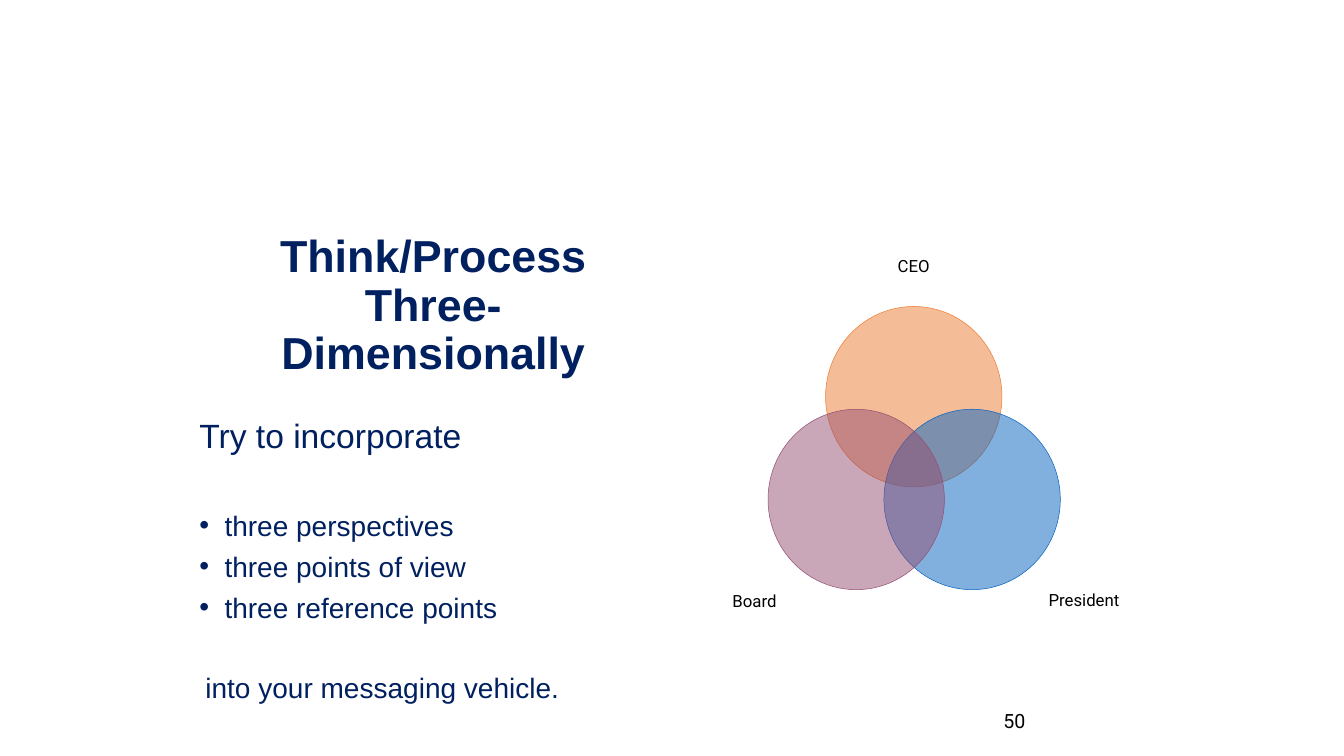
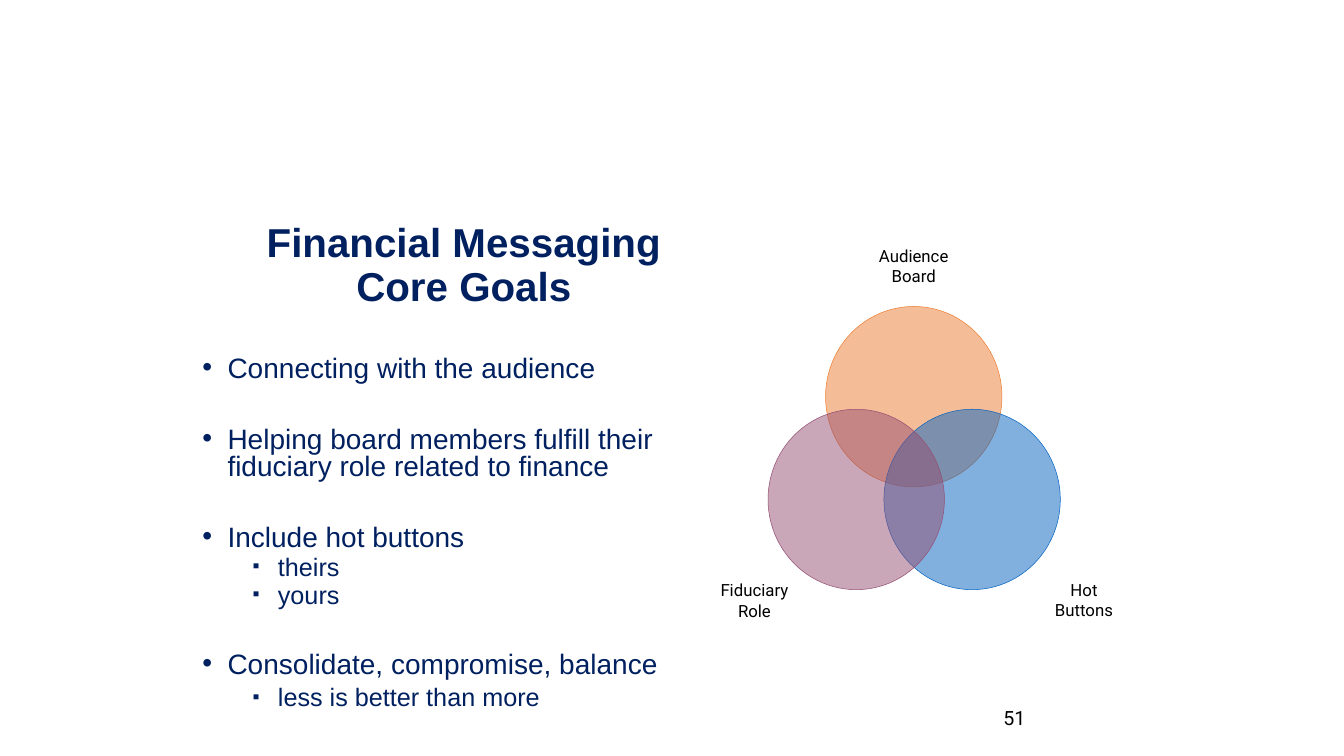
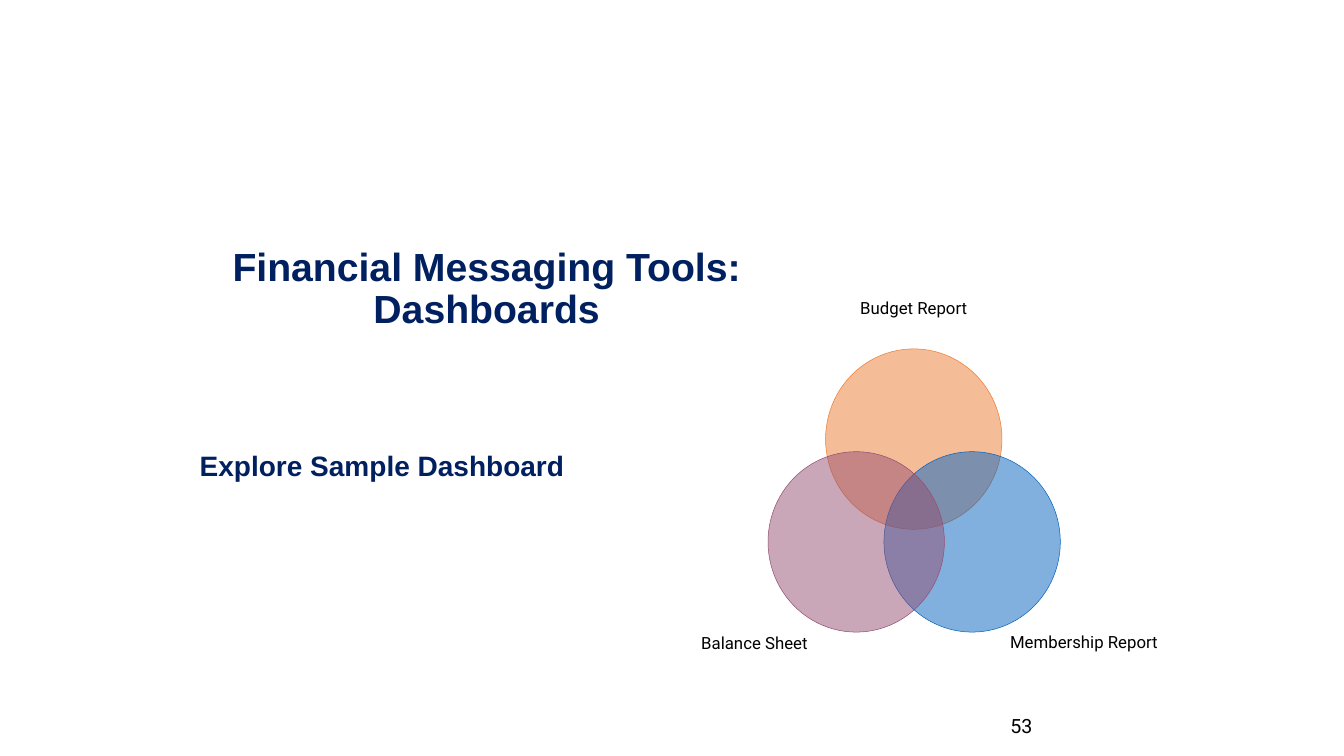
from copy import deepcopy

from lxml import etree
from pptx import Presentation
from pptx.dml.color import RGBColor
from pptx.enum.shapes import MSO_SHAPE
from pptx.enum.text import MSO_ANCHOR, MSO_AUTO_SIZE, PP_ALIGN
from pptx.oxml.ns import qn
from pptx.util import Pt

OVAL = MSO_SHAPE.OVAL
MID, TOP = MSO_ANCHOR.MIDDLE, MSO_ANCHOR.TOP
FIXED = MSO_AUTO_SIZE.NONE
MIDDLE, LEFT, RIGHT = PP_ALIGN.CENTER, PP_ALIGN.LEFT, PP_ALIGN.RIGHT

COLORS = {"navy": "002060", "black": "000000", "orange": "ED7D31",
          "blue": "0563C1", "plum": "954F72"}

HEAD = {"name": "Arial", "bold": True}
TEXT = {"name": "Arial", "bold": False}
LABEL = {"name": "Roboto", "size": Pt(12)}
NUMBER = {"name": "Roboto", "size": Pt(14)}
BARE = {"margin_left": 0, "margin_top": 0, "margin_right": 0,
        "margin_bottom": 0, "vertical_anchor": MID, "word_wrap": True}

KINDS = {
    "plain": {"mark": None, "level": 0, "left": 0, "hang": 0},
    "inset": {"mark": None, "level": 0, "left": 4.3, "hang": 0},
    "dot": {"mark": "•", "level": 0, "left": 18, "hang": -18},
    "square": {"mark": "▪", "level": 1, "left": 54, "hang": -18},
}

CIRCLES = [("orange", 67.7, 44.7), ("blue", 109.4, 118.1), ("plum", 26.6, 118.1)]
CENTERS = [(130.7, 15.6), (252.3, 254), (16.9, 254.6)]
WIDE, HIGH = 120, 32.4

SLIDES = [
    {
        "title": "Think/Process\vThree-Dimensionally", "size": 32,
        "head": (151.5, 168.7, 316.1, 100.8),
        "body": (135.2, 292.6, 349.2, 221),
        "items": [
            ("plain", "Try to incorporate", 24, 0, 1),
            ("dot", "three perspectives", 20, 43, 0.8),
            ("dot", "three points of view", 20, 10, 0.8),
            ("dot", "three reference points", 20, 10, 0.8),
            ("inset", "into your messaging vehicle.", 20, 38, 0.8),
        ],
        "venn": (522, 174.2), "labels": ["CEO", "President", "Board"],
        "number": "50", "corner": (589.7, 496.8),
    },
    {
        "title": "Financial Messaging\vCore Goals", "size": 28.8,
        "head": (167.2, 161, 328.3, 58.3),
        "body": (137.3, 246.6, 357.8, 275),
        "items": [
            ("dot", "Connecting with the audience", 20, 0, 1),
            ("dot", "Helping board members fulfill their fiduciary role "
                    "related to finance", 20, 31.5, 0.8),
            ("dot", "Include hot buttons", 20, 31.5, 0.8),
            ("square", "theirs", 18, 5, 0.7),
            ("square", "yours", 18, 5, 0.7),
            ("dot", "Consolidate, compromise, balance", 20, 31.5, 0.8),
            ("square", "less is better than more", 18, 5, 0.8),
        ],
        "venn": (522, 174.2),
        "labels": ["Audience\nBoard", "Hot\nButtons", "Fiduciary\nRole"],
        "number": "51", "corner": (589.7, 494.6),
    },
    {
        "title": "Financial Messaging Tools:\vDashboards", "size": 28,
        "head": (139.9, 151.5, 415.4, 110.9),
        "body": (135.4, 316.6, 370.8, 96),
        "items": [("plain", "Explore Sample Dashboard", 20, 0, 1)],
        "bold": True,
        "venn": (522, 204.5),
        "labels": ["Budget Report", "Membership Report", "Balance Sheet"],
        "number": "53", "corner": (594.7, 500.4),
    },
]


def apply(thing, values):
    for key, value in values.items():
        setattr(thing, key, value)


def paint(frame, style, color, align):
    for para in frame.paragraphs:
        para.alignment = align
        for run in para.runs:
            apply(run.font, style)
            run.font.color.rgb = RGBColor.from_string(COLORS[color])


def place(shape, box):
    keys = ("left", "top", "width", "height")
    apply(shape, {key: Pt(val) for key, val in zip(keys, box)})


def add_title(slide, box, text, size):
    title = slide.shapes.title
    place(title, box)
    frame = title.text_frame
    apply(frame, {"text": text, "vertical_anchor": MID, "auto_size": FIXED,
                  "word_wrap": True})
    paint(frame, {**HEAD, "size": Pt(size)}, "navy", MIDDLE)
    para = frame.paragraphs[0]
    para.line_spacing = 0.9
    for gap in para._p.findall(qn("a:br")):
        gap.append(deepcopy(para.runs[0]._r.rPr))


def set_mark(para, kind):
    props = para._p.get_or_add_pPr()
    props.set("marL", str(Pt(kind["left"])))
    props.set("indent", str(Pt(kind["hang"])))
    if not kind["mark"]:
        etree.SubElement(props, qn("a:buNone"))
        return
    if kind["level"]:
        etree.SubElement(props, qn("a:buSzPct"), val="79000")
    etree.SubElement(props, qn("a:buFont"), typeface="Arial")
    etree.SubElement(props, qn("a:buChar"), char=kind["mark"])


def add_body(slide, box, items, bold):
    body = slide.placeholders[1]
    place(body, box)
    frame = body.text_frame
    apply(frame, {"text": "\n".join(item[1] for item in items),
                  "vertical_anchor": TOP, "auto_size": FIXED, "word_wrap": True})
    paint(frame, {**TEXT, "bold": bold}, "navy", LEFT)
    for para, (name, _, size, before, line) in zip(frame.paragraphs, items):
        kind = KINDS[name]
        set_mark(para, kind)
        apply(para, {"level": kind["level"], "space_before": Pt(before),
                     "line_spacing": line})
        para.runs[0].font.size = Pt(size)


def add_disc(group, box, color):
    disc = group.shapes.add_shape(OVAL, *map(Pt, box))
    disc.shadow.inherit = False
    shade = RGBColor.from_string(COLORS[color])
    disc.fill.solid()
    disc.fill.fore_color.rgb = shade
    tint = disc._element.spPr.find(qn("a:solidFill")).find(qn("a:srgbClr"))
    etree.SubElement(tint, qn("a:alpha"), val="50000")
    disc.line.color.rgb = shade
    disc.line.width = Pt(0.37)


def add_venn(slide, spot, labels):
    left, top = spot
    group = slide.shapes.add_group_shape()
    for (color, across, down), (x, y), text in zip(CIRCLES, CENTERS, labels):
        add_disc(group, (left + across, top + down, 126, 128.9), color)
        area = (left + x - WIDE / 2, top + y - HIGH / 2, WIDE, HIGH)
        box = group.shapes.add_textbox(*map(Pt, area))
        apply(box.text_frame, {**BARE, "text": text})
        paint(box.text_frame, LABEL, "black", MIDDLE)


def add_number(slide, spot, text):
    box = slide.shapes.add_textbox(*map(Pt, spot), Pt(149.8), Pt(36))
    apply(box.text_frame, {"text": text, "vertical_anchor": MID, "word_wrap": True})
    paint(box.text_frame, NUMBER, "black", RIGHT)


def add_slide(deck, data):
    slide = deck.slides.add_slide(deck.slide_layouts[1])
    add_title(slide, data["head"], data["title"], data["size"])
    add_body(slide, data["body"], data["items"], data.get("bold", False))
    add_venn(slide, data["venn"], data["labels"])
    add_number(slide, data["corner"], data["number"])


def main():
    deck = Presentation()
    apply(deck, {"slide_width": Pt(960), "slide_height": Pt(540)})
    for data in SLIDES:
        add_slide(deck, data)
    deck.save("out.pptx")


if __name__ == "__main__":
    main()
